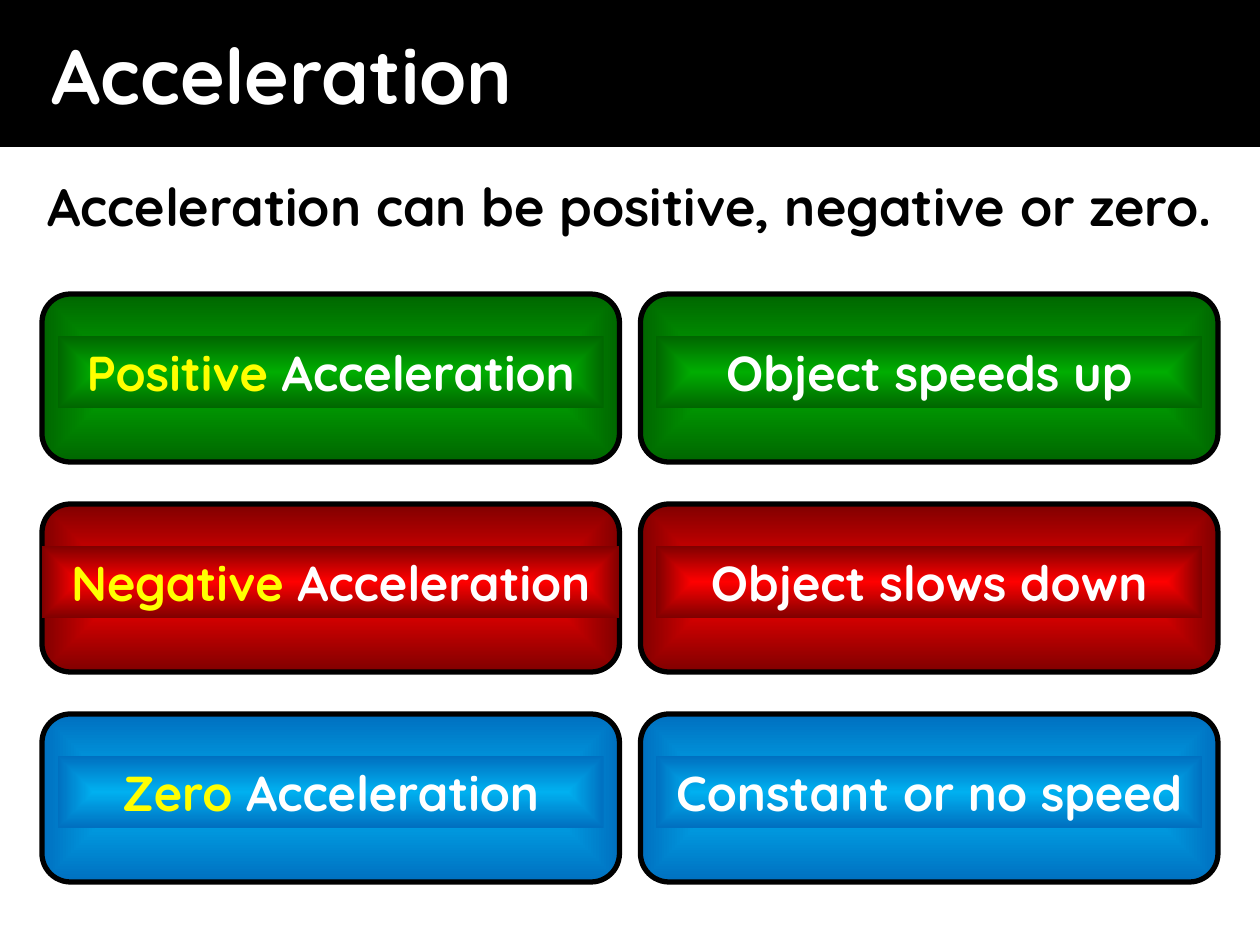
"""Builds a slide on positive, negative and zero acceleration."""
from lxml.etree import SubElement
from pptx import Presentation
from pptx.dml.color import RGBColor
from pptx.enum.shapes import MSO_SHAPE as Shape
from pptx.enum.text import MSO_ANCHOR as Anchor, MSO_AUTO_SIZE as AutoSize, PP_ALIGN as Align
from pptx.oxml.ns import qn
from pptx.util import Pt

TITLE = "Acceleration"
STATEMENT = "Acceleration can be positive, negative or zero."
CASES = [
    {"kind": "Positive", "effect": "Object speeds up", "tone": "green", "label_width": 312},
    {"kind": "Negative", "effect": "Object slows down", "tone": "red", "label_width": 330},
    {"kind": "Zero", "effect": "Constant or no speed", "tone": "blue", "label_width": 312},
]
EFFECT_WIDTH = 312

THEME = {
    "font": "Quicksand",
    "title": 44, "statement": 30, "label": 28,
    "black": "000000", "white": "FFFFFF", "yellow": "FFFF00",
    "green": ("00AD01", "006600"),
    "red": ("FF0000", "800000"),
    "blue": ("00B0F0", "0070C0"),
}

PAGE_WIDTH, PAGE_HEIGHT = 720, 540
TITLE_HEIGHT = 84
CARD_WIDTH, CARD_HEIGHT = 330, 96
COLUMNS = (24, 366)
FIRST_ROW, ROW_STEP = 168, 120
LABEL_OFFSET, LABEL_HEIGHT = 24, 41


def color(name):
    return RGBColor.from_string(THEME[name])


def write(frame, runs, size, align=Align.CENTER):
    para = frame.paragraphs[0]
    para.alignment = align
    for text, tint in runs:
        span = para.add_run()
        span.text = text
        span.font.name = THEME["font"]
        span.font.size = Pt(THEME[size])
        span.font.bold = True
        span.font.color.rgb = color(tint)


def glow(shape, tone):
    shape.fill.gradient()
    for stop, value in zip(shape.fill.gradient_stops, THEME[tone]):
        stop.color.rgb = RGBColor.from_string(value)
    gradient = shape.element.spPr.find(qn("a:gradFill"))
    gradient.remove(gradient.find(qn("a:lin")))
    route = SubElement(gradient, qn("a:path"), {"path": "rect"})
    SubElement(route, qn("a:fillToRect"), dict.fromkeys("ltrb", "50000"))


def add_card(page, left, top, tone, label_width, runs):
    group = page.shapes.add_group_shape()
    card = group.shapes.add_shape(
        Shape.ROUNDED_RECTANGLE, Pt(left), Pt(top), Pt(CARD_WIDTH), Pt(CARD_HEIGHT))
    card.adjustments[0] = 0.17
    card.line.color.rgb = color("black")
    card.line.width = Pt(3)
    label = group.shapes.add_shape(
        Shape.RECTANGLE, Pt(left + (CARD_WIDTH - label_width) / 2), Pt(top + LABEL_OFFSET),
        Pt(label_width), Pt(LABEL_HEIGHT))
    label.line.fill.background()
    for shape in (card, label):
        shape.shadow.inherit = False
        glow(shape, tone)
    frame = label.text_frame
    frame.word_wrap = True
    frame.auto_size = AutoSize.SHAPE_TO_FIT_TEXT
    frame.vertical_anchor = Anchor.TOP
    write(frame, runs, "label")


def add_title(page):
    title = page.shapes.title
    title.left, title.top, title.width, title.height = Pt(0), Pt(0), Pt(PAGE_WIDTH), Pt(TITLE_HEIGHT)
    title.fill.solid()
    title.fill.fore_color.rgb = color("black")
    frame = title.text_frame
    frame.vertical_anchor = Anchor.MIDDLE
    frame.margin_left = Pt(29.5)
    write(frame, [(TITLE, "white")], "title", Align.LEFT)


def add_statement(page):
    box = page.shapes.add_textbox(Pt(0), Pt(96), Pt(PAGE_WIDTH), Pt(43))
    box.text_frame.word_wrap = True
    box.text_frame.auto_size = AutoSize.SHAPE_TO_FIT_TEXT
    write(box.text_frame, [(STATEMENT, "black")], "statement")


def main():
    deck = Presentation()
    deck.slide_width, deck.slide_height = Pt(PAGE_WIDTH), Pt(PAGE_HEIGHT)
    page = deck.slides.add_slide(deck.slide_layouts[5])
    add_title(page)
    add_statement(page)
    for row, case in enumerate(CASES):
        top = FIRST_ROW + row * ROW_STEP
        kind_runs = [(case["kind"], "yellow"), (" Acceleration", "white")]
        add_card(page, COLUMNS[0], top, case["tone"], case["label_width"], kind_runs)
        add_card(page, COLUMNS[1], top, case["tone"], EFFECT_WIDTH, [(case["effect"], "white")])
    deck.save("out.pptx")


if __name__ == "__main__":
    main()
